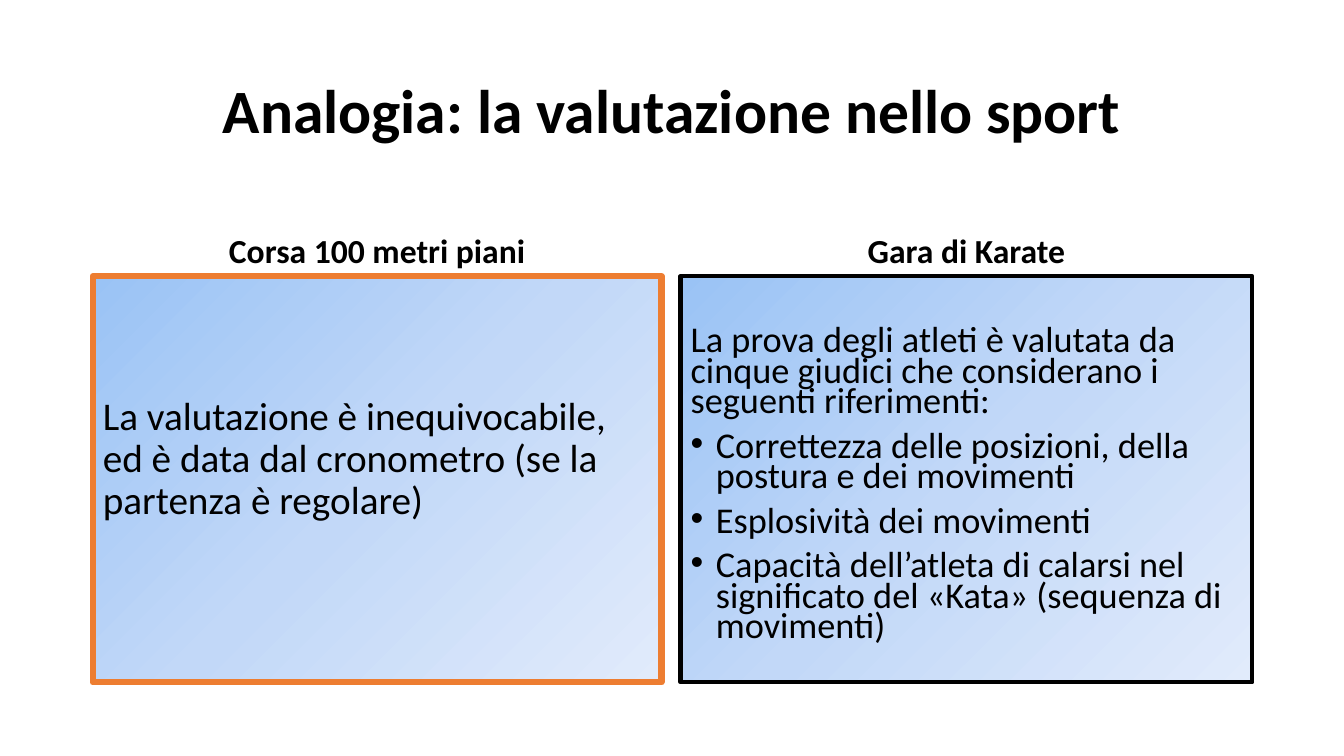
from copy import deepcopy

from lxml import etree
from pptx import Presentation
from pptx.dml.color import RGBColor
from pptx.enum.shapes import MSO_SHAPE
from pptx.enum.text import MSO_ANCHOR, MSO_AUTO_SIZE, PP_ALIGN
from pptx.oxml.ns import qn
from pptx.util import Inches, Pt

RECT = MSO_SHAPE.RECTANGLE
MIDDLE, BOTTOM, TOP = MSO_ANCHOR.MIDDLE, MSO_ANCHOR.BOTTOM, MSO_ANCHOR.TOP
CENTER, LEFT = PP_ALIGN.CENTER, PP_ALIGN.LEFT
NO_FIT = MSO_AUTO_SIZE.NONE

COLORS = {"black": "000000", "orange": "ED7D31",
          "start": "9AC3F5", "middle": "C2D8F8", "end": "E1EBFB"}
FONT = "Calibri"
HEADING_H = 0.9


def rgb(name):
    return RGBColor.from_string(COLORS[name])


def place(sp, box):
    sp.left, sp.top, sp.width, sp.height = (Inches(v) for v in box)


def style(p, size, bold=False, align=LEFT, spacing=0.9, before=0):
    p.alignment = align
    p.line_spacing = spacing
    p.space_before = Pt(before)
    p.space_after = Pt(0)
    p.font.name = FONT
    p.font.size = Pt(size)
    p.font.bold = bold
    p.font.color.rgb = rgb("black")


def set_bullet(p, bullet):
    indent = Inches(0.25) if bullet else 0
    pPr = p._p.get_or_add_pPr()
    pPr.set("marL", str(indent))
    pPr.set("indent", str(-indent))
    if bullet:
        font = etree.Element(qn("a:buFont"), typeface="Arial")
        mark = etree.Element(qn("a:buChar"), char="•")
        items = [font, mark]
    else:
        items = [etree.Element(qn("a:buNone"))]
    at = pPr.index(pPr.find(qn("a:defRPr")))
    pPr[at:at] = items


def add_heading(sp, box, text, size, anchor):
    place(sp, box)
    tf = sp.text_frame
    tf.text = text
    tf.word_wrap = True
    tf.auto_size = NO_FIT
    tf.vertical_anchor = anchor
    style(tf.paragraphs[0], size, True, CENTER)


def fill_gradient(sp):
    sp.fill.gradient()
    sp.fill.gradient_angle = 315
    stops = sp.fill._fill._gradFill.find(qn("a:gsLst"))
    stops.insert(1, deepcopy(stops[0]))
    for stop, pos, name in zip(sp.fill.gradient_stops, (0, 0.5, 1),
                               ("start", "middle", "end")):
        stop.position = pos
        stop.color.rgb = rgb(name)


def add_panel(sp, box, lines, size, spacing, inset, border):
    place(sp, box)
    fill_gradient(sp)
    sp.line.color.rgb = rgb("black")
    sp.line.width = Pt(border)
    tf = sp.text_frame
    tf.word_wrap = True
    tf.auto_size = NO_FIT
    tf.vertical_anchor = TOP
    tf.margin_top = Inches(inset)
    for i, (text, bullet) in enumerate(lines):
        p = tf.paragraphs[0] if i == 0 else tf.add_paragraph()
        p.text = text
        style(p, size, spacing=spacing, before=10 if i else 0)
        set_bullet(p, bullet)


def add_column(heading, panel, box, title, **panel_style):
    x, y, w, h = box
    add_heading(heading, (x, y, w, HEADING_H), title, 24, BOTTOM)
    panel_box = (x, y + HEADING_H, w, h - HEADING_H)
    add_panel(panel, panel_box, **panel_style)
    return panel_box


def add_frame(slide, box):
    sp = slide.shapes.add_shape(RECT, *(Inches(v) for v in box))
    sp.shadow.inherit = False
    sp.fill.background()
    sp.line.color.rgb = rgb("orange")
    sp.line.width = Pt(4.5)


def build_comparison(prs):
    slide = prs.slides.add_slide(prs.slide_layouts[4])
    ph = slide.placeholders
    add_heading(slide.shapes.title, (0.92, 0.4, 11.5, 1.45),
                "Analogia: la valutazione nello sport", 44, MIDDLE)
    race_box = add_column(
        ph[1], ph[2], (0.92, 1.84, 5.64, 4.93), "Corsa 100 metri piani",
        lines=[("La valutazione è inequivocabile, ed è data dal cronometro "
                "(se la partenza è regolare)", False)],
        size=28, spacing=0.9, inset=1.19, border=2.25)
    add_column(
        ph[3], ph[4], (6.75, 1.84, 5.67, 4.93), "Gara di Karate",
        lines=[("La prova degli atleti è valutata da cinque giudici che "
                "considerano i seguenti riferimenti:", False),
               ("Correttezza delle posizioni, della postura e dei movimenti", True),
               ("Esplosività dei movimenti", True),
               ("Capacità dell’atleta di calarsi nel significato del «Kata» "
                "(sequenza di movimenti)", True)],
        size=25.9, spacing=0.7, inset=0.52, border=3)
    add_frame(slide, race_box)


def main():
    prs = Presentation()
    prs.slide_width = Inches(13.33)
    prs.slide_height = Inches(7.5)
    build_comparison(prs)
    prs.save("out.pptx")


if __name__ == "__main__":
    main()
